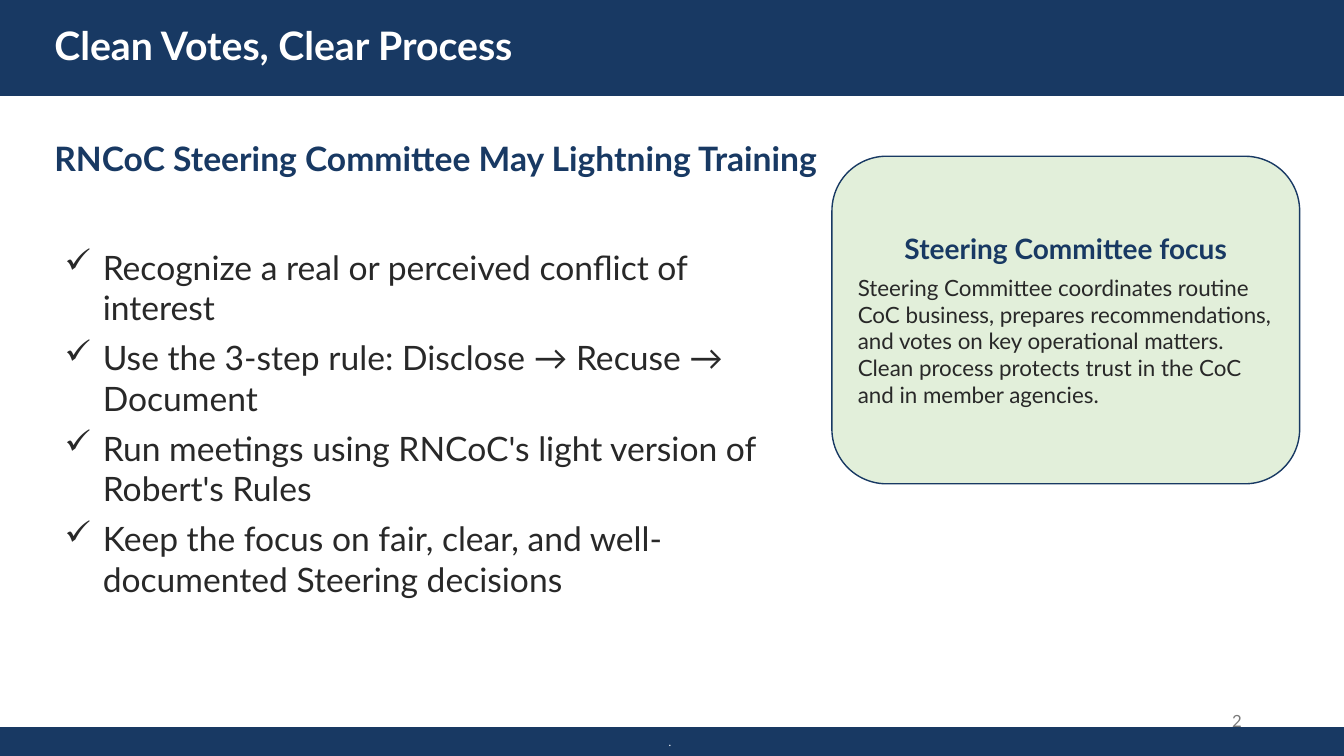
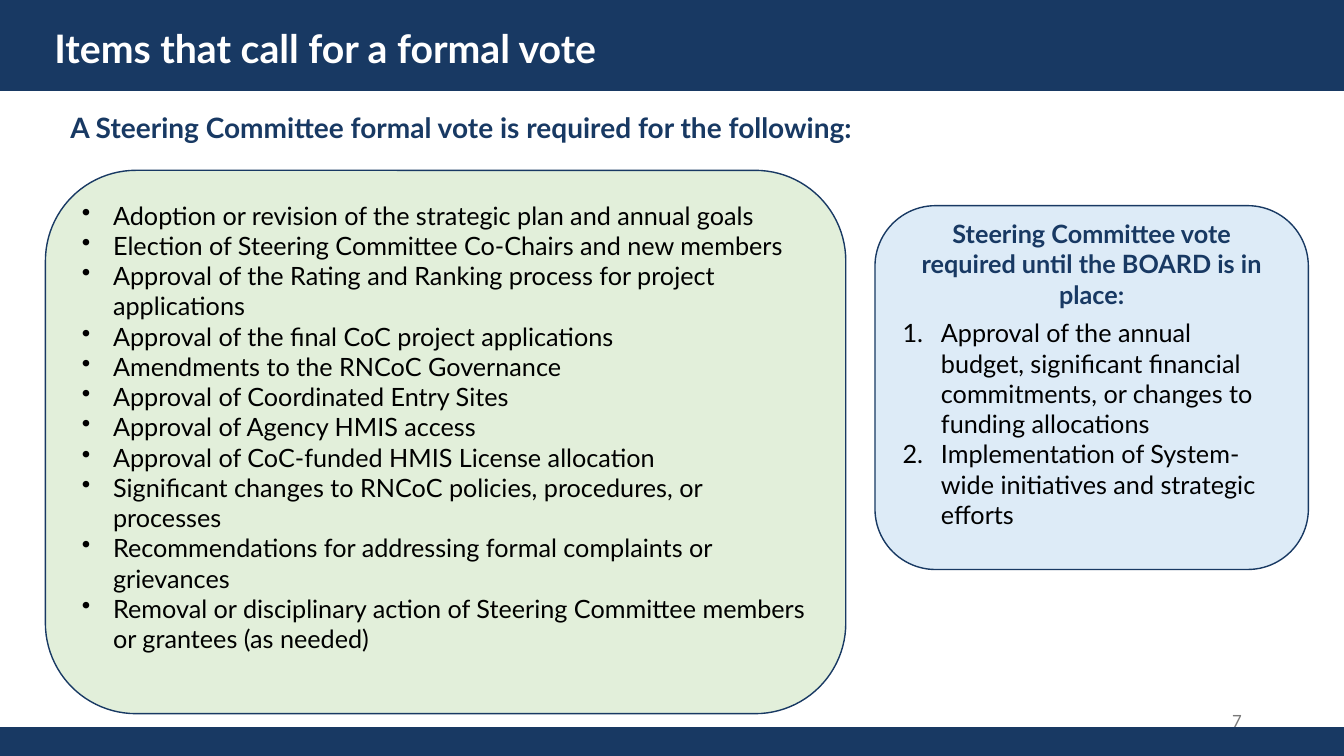
from lxml import etree
from pptx import Presentation
from pptx.dml.color import RGBColor
from pptx.enum.shapes import MSO_SHAPE
from pptx.enum.text import MSO_ANCHOR, MSO_AUTO_SIZE, PP_ALIGN
from pptx.oxml.ns import qn
from pptx.util import Inches, Pt

RECTANGLE, ROUNDED = MSO_SHAPE.RECTANGLE, MSO_SHAPE.ROUNDED_RECTANGLE
TOP, MIDDLE = MSO_ANCHOR.TOP, MSO_ANCHOR.MIDDLE
LEFT, CENTER, RIGHT = PP_ALIGN.LEFT, PP_ALIGN.CENTER, PP_ALIGN.RIGHT
FIXED = MSO_AUTO_SIZE.NONE
WIDTH, HEIGHT = Inches(13.33), Inches(7.5)
FONT = "Lato"
COLORS = {
    "navy": "183963",
    "green": "E2EFDA",
    "blue": "DDEBF7",
    "white": "FFFFFF",
    "ink": "282828",
    "black": "000000",
    "gray": "797979",
}
STYLES = {
    "title": {"size": 28, "bold": True, "color": "white"},
    "heading": {"size": 24, "bold": True, "color": "navy"},
    "subheading": {"size": 20, "bold": True, "color": "navy"},
    "check": {"size": 24, "color": "ink", "after": 7, "bullet": "✓", "indent": 0.38},
    "focus title": {"size": 20, "bold": True, "color": "navy", "align": CENTER, "after": 6},
    "focus text": {"size": 16, "color": "ink"},
    "item": {"size": 18, "color": "black", "bullet": "•", "indent": 0.31},
    "board title": {"size": 18, "bold": True, "color": "navy", "align": CENTER, "after": 6},
    "numbered": {"size": 18, "color": "black", "number": "arabicPeriod", "indent": 0.38},
    "mark": {"size": 8, "color": "white", "align": CENTER},
    "page": {"size": 12, "color": "gray", "align": RIGHT},
}
SLIDES = [
    {
        "title": "Clean Votes, Clear Process",
        "title top": 2.13,
        "band": 12.67,
        "cards": [
            ((61.9, 20.67, 34.8, 43.33), "green", 0.05, [
                ("focus title", ["Steering Committee focus"]),
                ("focus text", [
                    "Steering Committee coordinates routine CoC business, prepares "
                    "recommendations, and votes on key operational matters. Clean process "
                    "protects trust in the CoC and in member agencies.",
                ]),
            ]),
        ],
        "texts": [
            ((3.3, 17.6, 59.25, 6.67), {"word_wrap": False}, "heading",
             ["RNCoC Steering Committee May Lightning Training"]),
            ((4.8, 32, 54.75, 40), {"margin_left": 0, "margin_right": 0}, "check", [
                "Recognize a real or perceived conflict of interest",
                "Use the 3-step rule: Disclose → Recuse → Document",
                "Run meetings using RNCoC's light version of Robert's Rules",
                "Keep the focus on fair, clear, and well-documented Steering decisions",
            ]),
            ((48.98, 96.67, 1.73, 3.2), {"word_wrap": False}, "mark", ["."]),
        ],
        "page": "2",
    },
    {
        "title": "Items that call for a formal vote",
        "title top": 2.53,
        "band": 12,
        "cards": [
            ((3.38, 22.53, 59.55, 71.87), "green", 0.35, [
                ("item", [
                    "Adoption or revision of the strategic plan and annual goals",
                    "Election of Steering Committee Co-Chairs and new members",
                    "Approval of the Rating and Ranking process for project applications",
                    "Approval of the final CoC project applications",
                    "Amendments to the RNCoC Governance",
                    "Approval of Coordinated Entry Sites",
                    "Approval of Agency HMIS access",
                    "Approval of CoC-funded HMIS License allocation",
                    "Significant changes to RNCoC policies, procedures, or processes",
                    "Recommendations for addressing formal complaints or grievances",
                    "Removal or disciplinary action of Steering Committee members "
                    "or grantees (as needed)",
                ]),
            ]),
            ((65.1, 27.2, 32.25, 48.13), "blue", 0.32, [
                ("board title", ["Steering Committee vote required until the BOARD is in place:"]),
                ("numbered", [
                    "Approval of the annual budget, significant financial commitments, "
                    "or changes to funding allocations",
                    "Implementation of System-wide initiatives and strategic efforts",
                ]),
            ]),
        ],
        "texts": [
            ((4.5, 14, 60.6, 5.87), {"word_wrap": False}, "subheading",
             ["A Steering Committee formal vote is required for the following:"]),
        ],
        "page": "7",
    },
]


def share(left, top, width, height):
    return [round(part * side / 100) for part, side in
            zip((left, top, width, height), (WIDTH, HEIGHT, WIDTH, HEIGHT))]


def write(box, groups, **frame_values):
    frame = box.text_frame
    frame_values = {"word_wrap": True, "auto_size": FIXED,
                    "vertical_anchor": TOP, **frame_values}
    for name, value in frame_values.items():
        setattr(frame, name, value)
    lines = [(STYLES[style], text) for style, texts in groups for text in texts]
    for index, (style, text) in enumerate(lines):
        para = frame.add_paragraph() if index else frame.paragraphs[0]
        if "indent" in style:
            properties = para._p.get_or_add_pPr()
            properties.set("marL", str(Inches(style["indent"])))
            properties.set("indent", str(-Inches(style["indent"])))
            if "bullet" in style:
                etree.SubElement(properties, qn("a:buChar"), char=style["bullet"])
            else:
                etree.SubElement(properties, qn("a:buAutoNum"), type=style["number"])
        para.alignment = style.get("align", LEFT)
        para.space_before = Pt(0)
        para.space_after = Pt(style.get("after", 0))
        span = para.add_run()
        span.text = text
        font_values = {"name": FONT, "size": Pt(style["size"]), "bold": style.get("bold", False)}
        for name, value in font_values.items():
            setattr(span.font, name, value)
        span.font.color.rgb = RGBColor.from_string(COLORS[style["color"]])


deck = Presentation()
deck.slide_width, deck.slide_height = WIDTH, HEIGHT
title_only = deck.slide_layouts[5]

for content in SLIDES:
    slide = deck.slides.add_slide(title_only)
    title = slide.shapes.title
    title.left, title.top, title.width, title.height = share(3.3, content["title top"], 81, 7.6)
    write(title, [("title", [content["title"]])])

    panels = [
        (RECTANGLE, (0, 0, 100, content["band"]), "navy", 0.05, []),
        (RECTANGLE, (0, 96.27, 100, 3.73), "navy", 0.05, []),
    ] + [(ROUNDED, *card) for card in content["cards"]]
    for kind, place, color, bottom, groups in panels:
        panel = slide.shapes.add_shape(kind, *share(*place))
        panel.shadow.inherit = False
        panel.fill.solid()
        panel.fill.fore_color.rgb = RGBColor.from_string(COLORS[color])
        panel.line.color.rgb = RGBColor.from_string(COLORS["navy"])
        panel.line.width = Pt(1)
        if groups:
            write(panel, groups, vertical_anchor=MIDDLE, margin_bottom=Inches(bottom))
    panel.element.addnext(title.element)

    page_number = ((70.65, 92.67, 22.5, 5.33), {"vertical_anchor": MIDDLE}, "page",
                   [content["page"]])
    for place, frame_values, style, texts in content["texts"] + [page_number]:
        box = slide.shapes.add_textbox(*share(*place))
        write(box, [(style, texts)], **frame_values)

deck.save("out.pptx")
